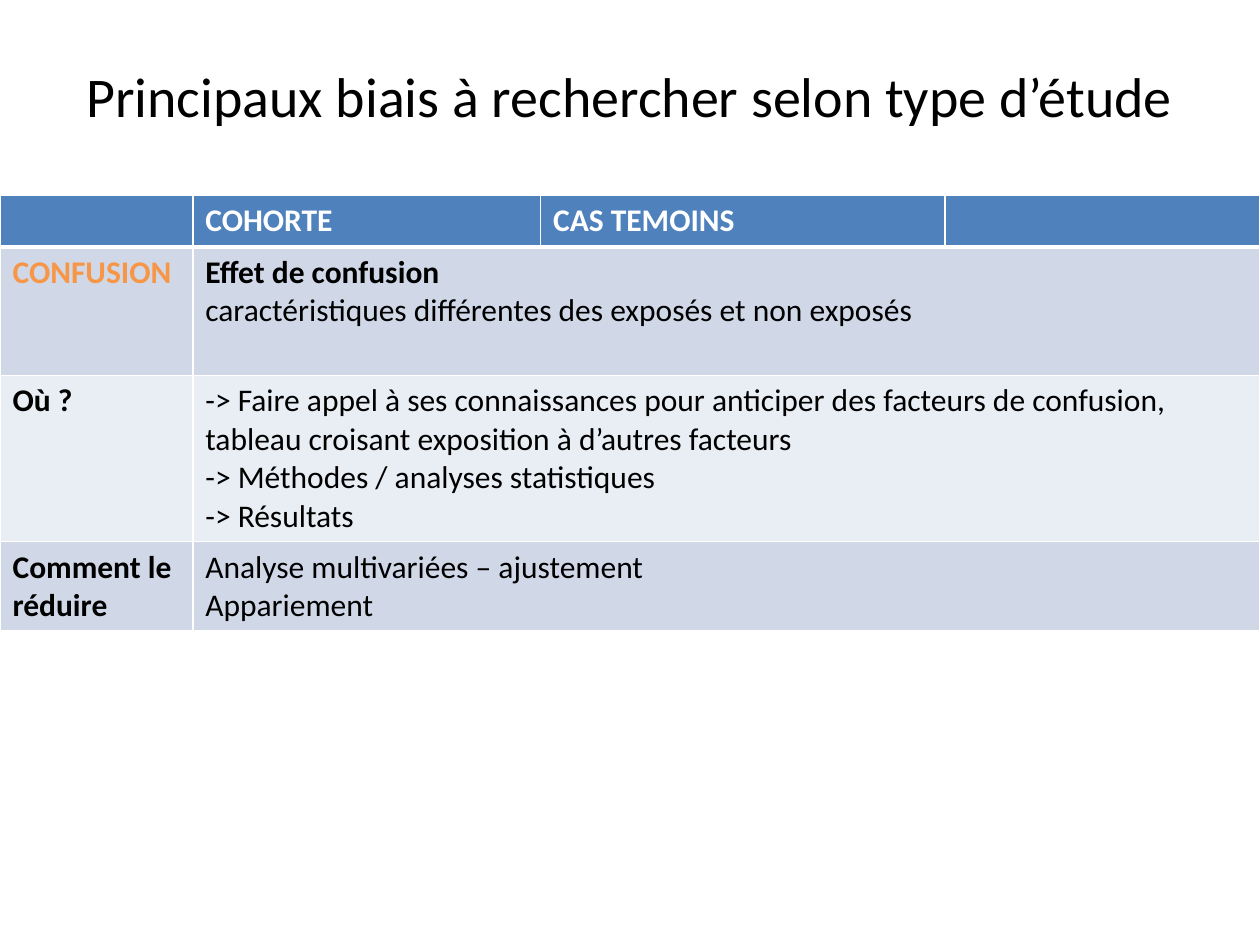
"""Build a slide with a table of the confusion bias by type of study."""
from dataclasses import dataclass

from lxml.etree import SubElement
from pptx import Presentation
from pptx.dml.color import RGBColor
from pptx.enum.text import MSO_ANCHOR, PP_ALIGN
from pptx.oxml.ns import qn
from pptx.util import Inches, Pt


@dataclass(frozen=True)
class Theme:
    font: str = "Calibri"
    title_size: int = 32
    body_size: int = 18
    black: str = "000000"
    white: str = "FFFFFF"
    orange: str = "F79646"
    header: str = "4F81BD"
    band_dark: str = "D0D8E8"
    band_light: str = "E9EDF4"


theme = Theme()


def write(paragraph, text, size=theme.body_size, color=theme.black, bold=False, align=PP_ALIGN.LEFT):
    paragraph.text = text
    paragraph.alignment = align
    for run in paragraph.runs:
        run.font.name = theme.font
        run.font.size = Pt(size)
        run.font.bold = bold
        run.font.color.rgb = RGBColor.from_string(color)


def style_cell(cell, fill, bottom_width=1):
    properties = cell._tc.get_or_add_tcPr()
    for side, width in (("L", 1), ("R", 1), ("T", 1), ("B", bottom_width)):
        line = SubElement(properties, qn(f"a:ln{side}"), w=str(Pt(width)))
        line_fill = SubElement(line, qn("a:solidFill"))
        SubElement(line_fill, qn("a:srgbClr"), val=theme.white)
    cell.fill.solid()
    cell.fill.fore_color.rgb = RGBColor.from_string(fill)


presentation = Presentation()
presentation.slide_width = Inches(10)
presentation.slide_height = Inches(7.5)
slide = presentation.slides.add_slide(presentation.slide_layouts[6])

title = slide.shapes.add_textbox(Inches(0.5), Inches(0.13), Inches(9), Inches(1.25))
title.text_frame.word_wrap = True
title.text_frame.vertical_anchor = MSO_ANCHOR.MIDDLE
write(
    title.text_frame.paragraphs[0],
    "Principaux biais à rechercher selon type d’étude",
    size=theme.title_size,
    align=PP_ALIGN.CENTER,
)

headings = ["", "COHORTE", "CAS TEMOINS", ""]
rows = [
    ("CONFUSION", theme.orange, theme.band_dark, [
        ("Effet de confusion", True),
        ("caractéristiques différentes des exposés et non exposés", False),
    ]),
    ("Où ?", theme.black, theme.band_light, [
        ("-> Faire appel à ses connaissances pour anticiper des facteurs de confusion,\v"
         "tableau croisant exposition à d’autres facteurs", False),
        ("-> Méthodes / analyses statistiques", False),
        ("-> Résultats", False),
    ]),
    ("Comment le réduire", theme.black, theme.band_dark, [
        ("Analyse multivariées – ajustement", False),
        ("Appariement", False),
    ]),
]
column_widths = [1.53, 2.76, 3.21, 2.5]
row_heights = [0.41, 1.02, 1.32, 0.71]

table = slide.shapes.add_table(
    len(row_heights), len(column_widths),
    Inches(0), Inches(1.55), Inches(sum(column_widths)), Inches(sum(row_heights)),
).table
for column, width in zip(table.columns, column_widths):
    column.width = Inches(width)
for row, height in zip(table.rows, row_heights):
    row.height = Inches(height)

for cell, heading in zip(table.rows[0].cells, headings):
    style_cell(cell, theme.header, bottom_width=3)
    if heading:
        write(cell.text_frame.paragraphs[0], heading, color=theme.white, bold=True)

for row_index, (label, label_color, fill, lines) in enumerate(rows, start=1):
    for cell in table.rows[row_index].cells:
        style_cell(cell, fill)
    label_cell, body_cell = table.cell(row_index, 0), table.cell(row_index, 1)
    body_cell.merge(table.cell(row_index, 3))
    write(label_cell.text_frame.paragraphs[0], label, color=label_color, bold=True)
    frame = body_cell.text_frame
    for line_index, (text, bold) in enumerate(lines):
        paragraph = frame.add_paragraph() if line_index else frame.paragraphs[0]
        write(paragraph, text, bold=bold)

presentation.save("out.pptx")
